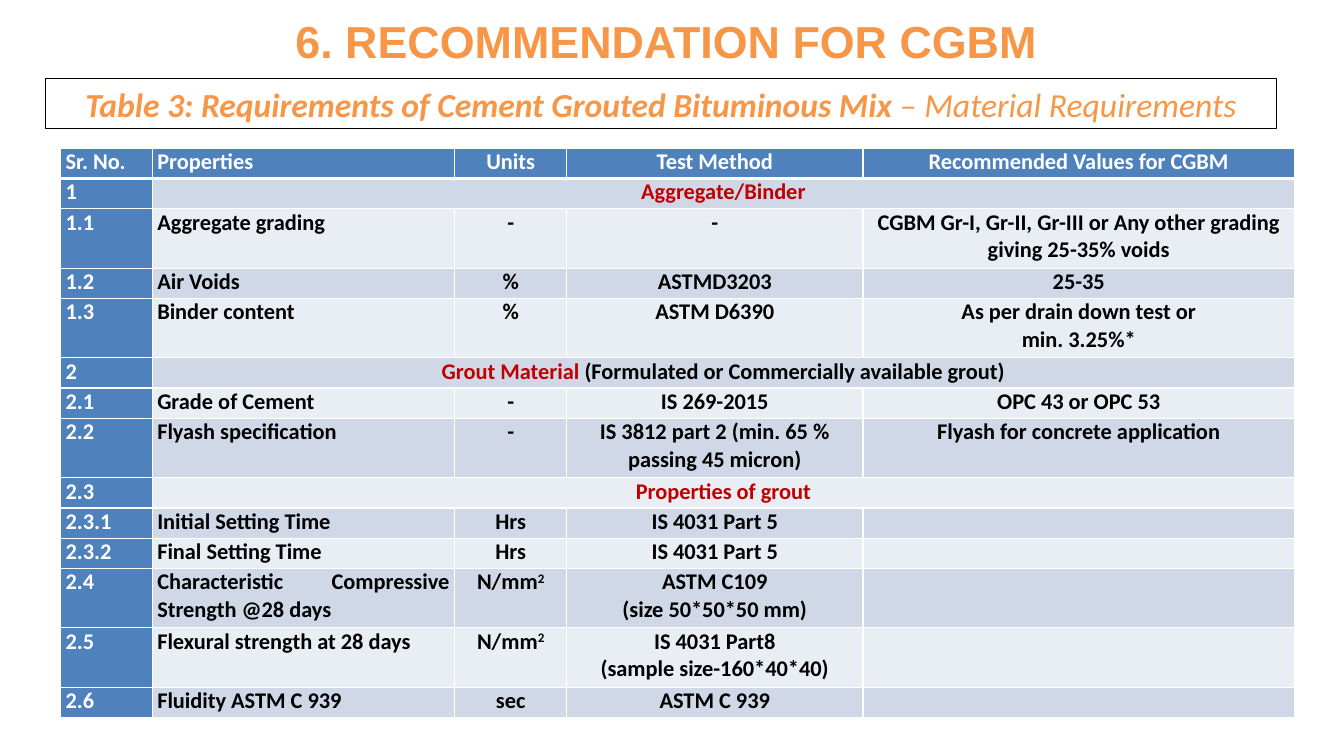
from dataclasses import dataclass

from lxml import etree
from pptx import Presentation
from pptx.dml.color import RGBColor
from pptx.enum.shapes import MSO_SHAPE
from pptx.enum.text import MSO_ANCHOR, PP_ALIGN
from pptx.oxml.ns import qn
from pptx.util import Inches, Pt

RECT = MSO_SHAPE.RECTANGLE
TOP, MIDDLE = MSO_ANCHOR.TOP, MSO_ANCHOR.MIDDLE
CENTER, JUSTIFY = PP_ALIGN.CENTER, PP_ALIGN.JUSTIFY


@dataclass(frozen=True)
class Theme:
    orange: str = "F79646"
    blue: str = "4F81BD"
    dark: str = "D0D8E8"
    light: str = "E9EDF4"
    red: str = "C00000"
    black: str = "000000"
    white: str = "FFFFFF"
    head: str = "Arial"
    body: str = "Calibri"
    title: int = 32
    caption: int = 24
    cell: int = 16


THEME = Theme()
COLS = (0.91, 3, 1.11, 2.94, 4.28)
SINGLE, DOUBLE = 0.3, 0.59
HEADER = ("Sr. No.", "Properties", "Units", "Test Method",
          "Recommended Values for CGBM")
# A row of two is a section: its red words, then any black words.
# "^" starts a superscript; a line break starts a new paragraph.
ROWS = (
    ("1", ("Aggregate/Binder", "")),
    ("1.1", "Aggregate grading", "-", "-",
     "CGBM Gr-I, Gr-II, Gr-III or Any other grading giving 25-35% voids"),
    ("1.2", "Air Voids", "%", "ASTMD3203", "25-35"),
    ("1.3", "Binder content", "%", "ASTM D6390",
     "As per drain down test or\nmin. 3.25%*"),
    ("2", ("Grout Material ", "(Formulated or Commercially available grout)")),
    ("2.1", "Grade of Cement", "-", "IS 269-2015", "OPC 43 or OPC 53"),
    ("2.2", "Flyash specification", "-",
     "IS 3812 part 2 (min. 65 % passing 45 micron)",
     "Flyash for concrete application"),
    ("2.3", ("Properties of grout", "")),
    ("2.3.1", "Initial Setting Time", "Hrs", "IS 4031 Part 5", ""),
    ("2.3.2", "Final Setting Time", "Hrs", "IS 4031 Part 5", ""),
    ("2.4", "Characteristic Compressive Strength @28 days", "N/mm^2",
     "ASTM C109\n(size 50*50*50 mm)", ""),
    ("2.5", "Flexural strength at 28 days", "N/mm^2",
     "IS 4031 Part8\n(sample size-160*40*40)", ""),
    ("2.6", "Fluidity ASTM C 939", "sec", "ASTM C 939", ""),
)
TALL = {"1.1", "1.3", "2.2", "2.4", "2.5"}


def rgb(color):
    return RGBColor.from_string(color)


def set_font(para, face, size, color, align):
    para.alignment = align
    font = para.font
    font.name, font.size, font.bold = face, Pt(size), True
    font.color.rgb = rgb(color)


def add_run(para, text):
    run = para.add_run()
    run.text = text
    return run


def add_title(slide, text):
    box = slide.shapes.add_textbox(Inches(0.61), 0, Inches(12), Inches(0.81))
    frame = box.text_frame
    frame.word_wrap = True
    frame.vertical_anchor = MIDDLE
    para = frame.paragraphs[0]
    set_font(para, THEME.head, THEME.title, THEME.orange, CENTER)
    add_run(para, text)


def add_caption(slide, strong, plain):
    box = slide.shapes.add_shape(RECT, Inches(0.45), Inches(0.78),
                                 Inches(12.21), Inches(0.5))
    box.shadow.inherit = False
    box.fill.background()
    box.line.color.rgb = rgb(THEME.black)
    box.line.width = Pt(0.75)
    frame = box.text_frame
    frame.word_wrap = True
    frame.vertical_anchor = TOP
    para = frame.paragraphs[0]
    set_font(para, THEME.body, THEME.caption, THEME.orange, CENTER)
    para.font.italic = True
    add_run(para, strong)
    add_run(para, plain).font.bold = False


def add_edges(cell, base):
    """Draw white cell borders; base is the width of the lower one."""
    props = cell._tc.get_or_add_tcPr()
    for side, width in (("L", 1), ("R", 1), ("T", 1), ("B", base)):
        line = etree.SubElement(props, qn(f"a:ln{side}"), w=str(Pt(width)))
        fill = etree.SubElement(line, qn("a:solidFill"))
        etree.SubElement(fill, qn("a:srgbClr"), val=THEME.white)


def style_cell(cell, fill, base=1):
    add_edges(cell, base)
    cell.fill.solid()
    cell.fill.fore_color.rgb = rgb(fill)
    cell.margin_left = cell.margin_right = Inches(0.05)
    cell.margin_top = cell.margin_bottom = 0
    cell.vertical_anchor = TOP


def write_cell(cell, text, color, align):
    frame = cell.text_frame
    for i, line in enumerate(text.split("\n")):
        para = frame.add_paragraph() if i else frame.paragraphs[0]
        set_font(para, THEME.body, THEME.cell, color, align)
        main, _, power = line.partition("^")
        if main:
            add_run(para, main)
        if power:
            run = add_run(para, power)
            run.font._element.set("baseline", "30000")


def write_section(cell, red, black):
    write_cell(cell, red, THEME.red, CENTER)
    if black:
        run = add_run(cell.text_frame.paragraphs[0], black)
        run.font.color.rgb = rgb(THEME.black)


def fill_row(table, r, row):
    band = THEME.dark if r % 2 else THEME.light
    for c in range(len(COLS)):
        blue = r == 0 or c == 0
        style_cell(table.cell(r, c), THEME.blue if blue else band,
                   1 if r else 3)
    if len(row) == 2:
        table.cell(r, 1).merge(table.cell(r, len(COLS) - 1))
        write_cell(table.cell(r, 0), row[0], THEME.white, JUSTIFY)
        write_section(table.cell(r, 1), *row[1])
        return
    for c, text in enumerate(row):
        color = THEME.white if r == 0 or c == 0 else THEME.black
        write_cell(table.cell(r, c), text, color, JUSTIFY if c < 2 else CENTER)


def add_grid(slide):
    rows = (HEADER, *ROWS)
    highs = [DOUBLE if row[0] in TALL else SINGLE for row in rows]
    table = slide.shapes.add_table(
        len(rows), len(COLS), Inches(0.6), Inches(1.47),
        Inches(sum(COLS)), Inches(sum(highs))).table
    for col, width in zip(table.columns, COLS):
        col.width = Inches(width)
    for r, row in enumerate(rows):
        table.rows[r].height = Inches(highs[r])
        fill_row(table, r, row)


def main():
    deck = Presentation()
    deck.slide_width, deck.slide_height = Inches(13.33), Inches(7.5)
    slide = deck.slides.add_slide(deck.slide_layouts[6])
    add_title(slide, "6. RECOMMENDATION FOR CGBM")
    add_caption(slide,
                "Table 3: Requirements of Cement Grouted Bituminous Mix ",
                "– Material Requirements")
    add_grid(slide)
    deck.save("out.pptx")


if __name__ == "__main__":
    main()
